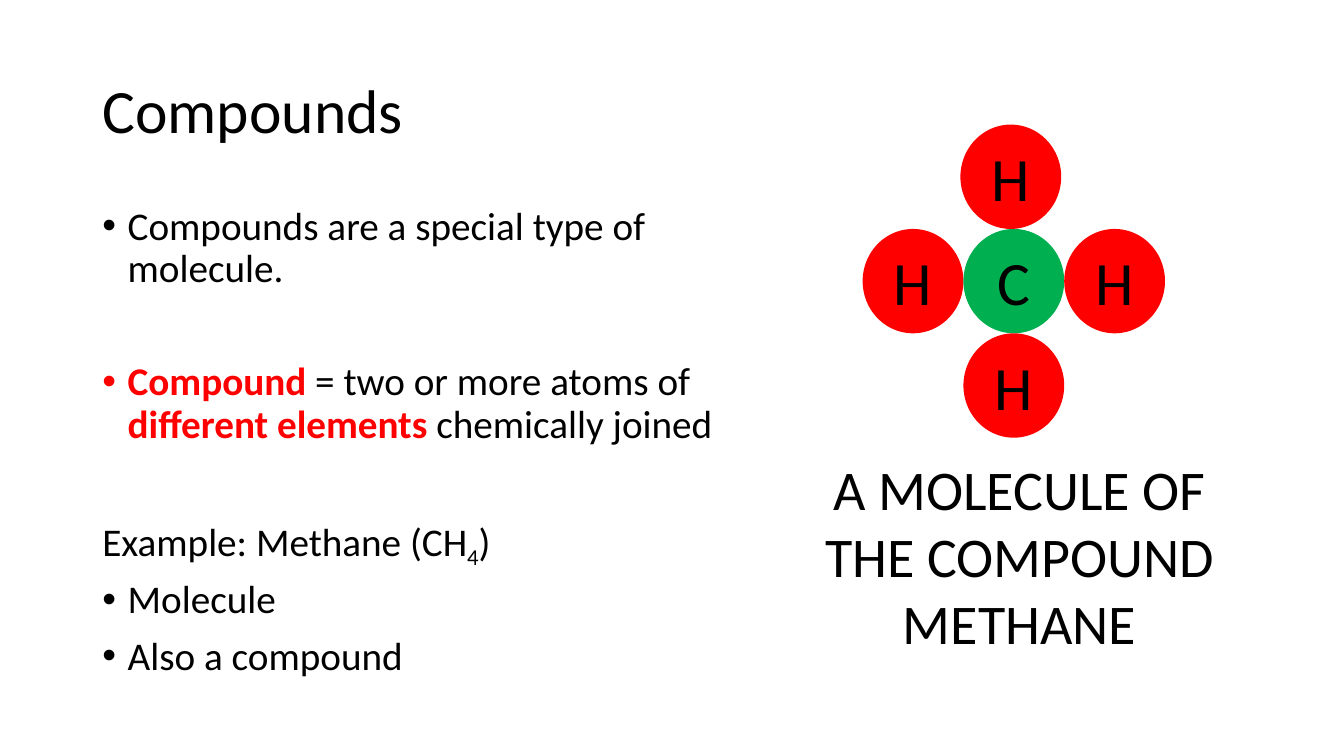
import pptx
import pptx.dml.color
import pptx.enum.shapes
import pptx.enum.text
import pptx.oxml
import pptx.oxml.ns
import pptx.util

Cm = pptx.util.Cm
Pt = pptx.util.Pt
ALIGN = pptx.enum.text.PP_ALIGN
ANCHOR = pptx.enum.text.MSO_ANCHOR

BLACK = pptx.dml.color.RGBColor(0x00, 0x00, 0x00)
RED = pptx.dml.color.RGBColor(0xFF, 0x00, 0x00)
GREEN = pptx.dml.color.RGBColor(0x00, 0xB0, 0x50)

BULLETS = [
    (True, 10, [("Compounds are a special type of molecule.", "")]),
    (True, 50.75, [("Compound", "key"), (" = two or more atoms of ", ""),
                   ("different elements ", "key"), ("chemically joined", "")]),
    (False, 50.75, [("Example: Methane (CH", ""), ("4", "sub"), (")", "")]),
    (True, 10, [("Molecule", "")]),
    (True, 10, [("Also a compound", "")]),
]

ATOMS = [
    ("H", RED, -1, 0),
    ("C", GREEN, 0, 0),
    ("H", RED, -0.03, -1),
    ("H", RED, 1, 0),
    ("H", RED, 0, 1),
]


class SlideBuilder:
    font = "Calibri"
    title_size = 44
    body_size = 28
    caption_size = 40
    indent = Cm(0.64)

    def __init__(self, deck):
        self.slide = deck.slides.add_slide(deck.slide_layouts[5])

    def add_words(self, paragraph, words, size, style=""):
        run = paragraph.add_run()
        run.text = words
        run.font.name = self.font
        run.font.size = Pt(size)
        run.font.bold = style == "key"
        run.font.color.rgb = RED if style == "key" else BLACK
        if style == "sub":
            run.font._element.set("baseline", "-25000")

    def title(self, words, left, top, width, height):
        heading = self.slide.shapes.title
        heading.left, heading.top = Cm(left), Cm(top)
        heading.width, heading.height = Cm(width), Cm(height)
        frame = heading.text_frame
        frame.auto_size = pptx.enum.text.MSO_AUTO_SIZE.NONE
        frame.vertical_anchor = ANCHOR.MIDDLE
        line = frame.paragraphs[0]
        line.alignment = ALIGN.LEFT
        line.line_spacing = 0.9
        self.add_words(line, words, self.title_size)

    def text_frame(self, left, top, width, height):
        box = self.slide.shapes.add_textbox(Cm(left), Cm(top), Cm(width), Cm(height))
        box.text_frame.word_wrap = True
        return box.text_frame

    def bullet(self, paragraph):
        properties = paragraph._p.get_or_add_pPr()
        properties.set("marL", str(self.indent))
        properties.set("indent", str(-self.indent))
        namespace = pptx.oxml.ns.nsdecls("a")
        properties.append(pptx.oxml.parse_xml(f'<a:buFont {namespace} typeface="Arial"/>'))
        properties.append(pptx.oxml.parse_xml(f'<a:buChar {namespace} char="•"/>'))

    def body(self, items, left, top, width, height):
        frame = self.text_frame(left, top, width, height)
        for index, (bulleted, space, runs) in enumerate(items):
            paragraph = frame.add_paragraph() if index else frame.paragraphs[0]
            paragraph.line_spacing = 0.9
            paragraph.space_before = Pt(space)
            if bulleted:
                self.bullet(paragraph)
            for words, style in runs:
                self.add_words(paragraph, words, self.body_size, style)

    def molecule(self, atoms, left, top, width, height):
        group = self.slide.shapes.add_group_shape()
        for symbol, color, column, row in atoms:
            atom = group.shapes.add_shape(
                pptx.enum.shapes.MSO_SHAPE.OVAL,
                Cm(left + column * width), Cm(top + row * height), Cm(width), Cm(height))
            atom.shadow.inherit = False
            atom.fill.solid()
            atom.fill.fore_color.rgb = color
            atom.line.fill.background()
            frame = atom.text_frame
            frame.margin_left = frame.margin_right = 0
            frame.margin_top = frame.margin_bottom = 0
            frame.vertical_anchor = ANCHOR.MIDDLE
            frame.paragraphs[0].alignment = ALIGN.CENTER
            self.add_words(frame.paragraphs[0], symbol, self.title_size)

    def caption(self, words, left, top, width, height):
        line = self.text_frame(left, top, width, height).paragraphs[0]
        line.alignment = ALIGN.CENTER
        self.add_words(line, words, self.caption_size)


def main():
    deck = pptx.Presentation()
    deck.slide_width, deck.slide_height = Cm(33.87), Cm(19.05)
    builder = SlideBuilder(deck)
    builder.title("Compounds", 2.33, 1.01, 29.21, 3.68)
    builder.body(BULLETS, 2.33, 5.07, 17.4, 12.09)
    builder.molecule(ATOMS, 24.28, 5.77, 2.54, 2.63)
    builder.caption("A MOLECULE OF THE COMPOUND METHANE", 19.71, 11.33, 11.96, 5.38)
    deck.save("out.pptx")


if __name__ == "__main__":
    main()
